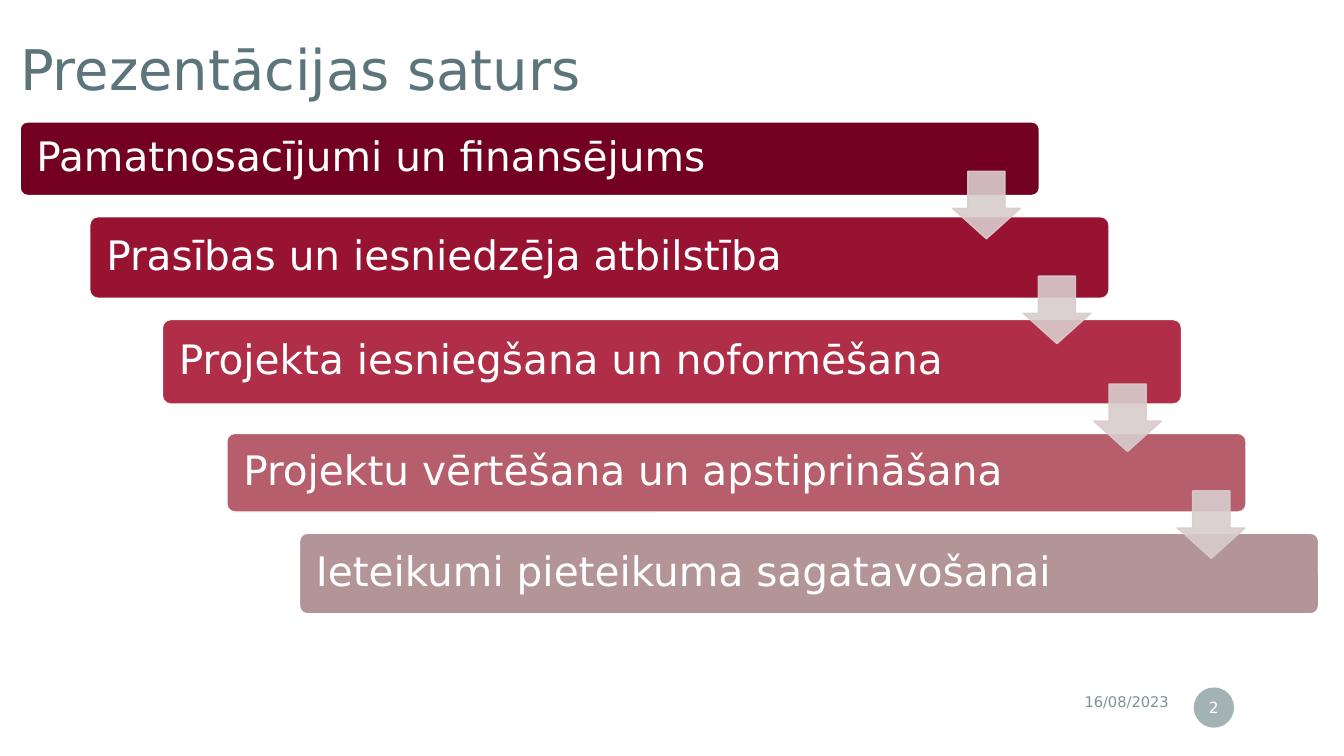
from dataclasses import dataclass
from lxml import etree
from pptx import Presentation, util as u
from pptx.dml.color import RGBColor
from pptx.enum import shapes, text
from pptx.oxml.ns import qn


@dataclass(frozen=True)
class Theme:
    font: str = "DejaVu Sans"
    title: str = "5B757A"
    muted: str = "7C9396"
    white: str = "FFFFFF"
    arrow: str = "D8CCCD"
    head: float = 40
    step: float = 29
    date: float = 10.5
    page: float = 11


T = Theme()
KIND = shapes.MSO_SHAPE
SIDE = text.PP_ALIGN

prs = Presentation()
prs.slide_width, prs.slide_height = u.Inches(13.33), u.Inches(7.5)
# Grid of 100 columns by 100 rows
COL, ROW = prs.slide_width / 100, prs.slide_height / 100

# Text, fill, left, top and height of each bar, then the arrow's
# left and top measured from the bar's corner
STEPS = [
    ("Pamatnosacījumi un finansējums", "740021", 0, 0, 9.73, (69.38, 6.53)),
    ("Prasības un iesniedzēja atbilstība", "981231", 5.18, 12.53, 10.8, (69.45, 7.87)),
    ("Projekta iesniegšana un noformēšana", "B02E47", 10.58, 26.13, 11.2, (69.3, 8.53)),
    ("Projektu vērtēšana un apstiprināšana", "B65E6B", 15.38, 41.2, 10.4, (70.73, 7.6)),
    ("Ieteikumi pieteikuma sagatavošanai", "B39598", 20.78, 54.4, 10.67, None),
]


def emu(x, y, w, h):
    return [round(v) for v in (x * COL, y * ROW, w * COL, h * ROW)]


def fade(part, share):
    """Make every solid colour of a shape's fill and line see-through."""
    for tone in part._element.spPr.iter(qn("a:srgbClr")):
        etree.SubElement(tone, qn("a:alpha"), val=str(share * 1000))


def shape(slide, kind, box, fill, line=None):
    part = slide.shapes.add_shape(kind, *emu(*box))
    part.shadow.inherit = False
    part.fill.solid()
    part.fill.fore_color.rgb = RGBColor.from_string(fill)
    if line:
        part.line.color.rgb = RGBColor.from_string(line)
        part.line.width = u.Pt(1)
    else:
        part.line.fill.background()
    return part


def write(part, words, size, tone, side=SIDE.LEFT, pad=(0.1, 0.05), gap=1.0):
    frame = part.text_frame
    frame.word_wrap = True
    frame.vertical_anchor = text.MSO_ANCHOR.MIDDLE
    frame.margin_left = frame.margin_right = u.Inches(pad[0])
    frame.margin_top = frame.margin_bottom = u.Inches(pad[1])
    para = frame.paragraphs[0]
    para.text = words
    para.alignment = side
    para.line_spacing = gap
    para.font.name, para.font.size = T.font, u.Pt(size)
    para.font.color.rgb = RGBColor.from_string(tone)


def title(slide, box):
    part = slide.shapes.add_textbox(*emu(*box))
    write(part, "Prezentācijas saturs", T.head, T.title, pad=(0.2, 0.2), gap=0.9)


def stairs(slide, x, y, w, h):
    wide = w - STEPS[-1][2]
    # Bars
    for words, fill, dx, dy, tall, _ in STEPS:
        bar = shape(slide, KIND.ROUNDED_RECTANGLE, (x + dx, y + dy, wide, tall), fill, T.white)
        bar.adjustments[0] = 0.1
        write(bar, words, T.step, T.white, pad=(0.14, 0.12), gap=0.9)
    # Arrows between the bars
    for *_, dx, dy, _, tip in STEPS[:-1]:
        box = (x + dx + tip[0], y + dy + tip[1], 5.03, 8.93)
        arrow = shape(slide, KIND.DOWN_ARROW, box, T.arrow, T.arrow)
        arrow.adjustments[0], arrow.adjustments[1] = 0.55, 0.45
        fade(arrow, 90)


def footer(slide, x, y, w, h):
    # Date
    date = slide.shapes.add_textbox(*emu(x, y, w - 4.12, 4.67))
    write(date, "16/08/2023", T.date, T.muted, SIDE.RIGHT)
    # Page number
    page = shape(slide, KIND.OVAL, (x + w - 3, y + h - 5.33, 3, 5.33), T.muted)
    fade(page, 70)
    write(page, "2", T.page, T.white, SIDE.CENTER, pad=(0.02, 0.05))


def main():
    slide = prs.slides.add_slide(prs.slide_layouts[6])
    title(slide, (0, 1.6, 62.93, 15.87))
    footer(slide, 65.12, 90.53, 26.7, 5.73)
    stairs(slide, 1.5, 16.13, 96.62, 65.07)
    prs.save("out.pptx")


if __name__ == "__main__":
    main()
